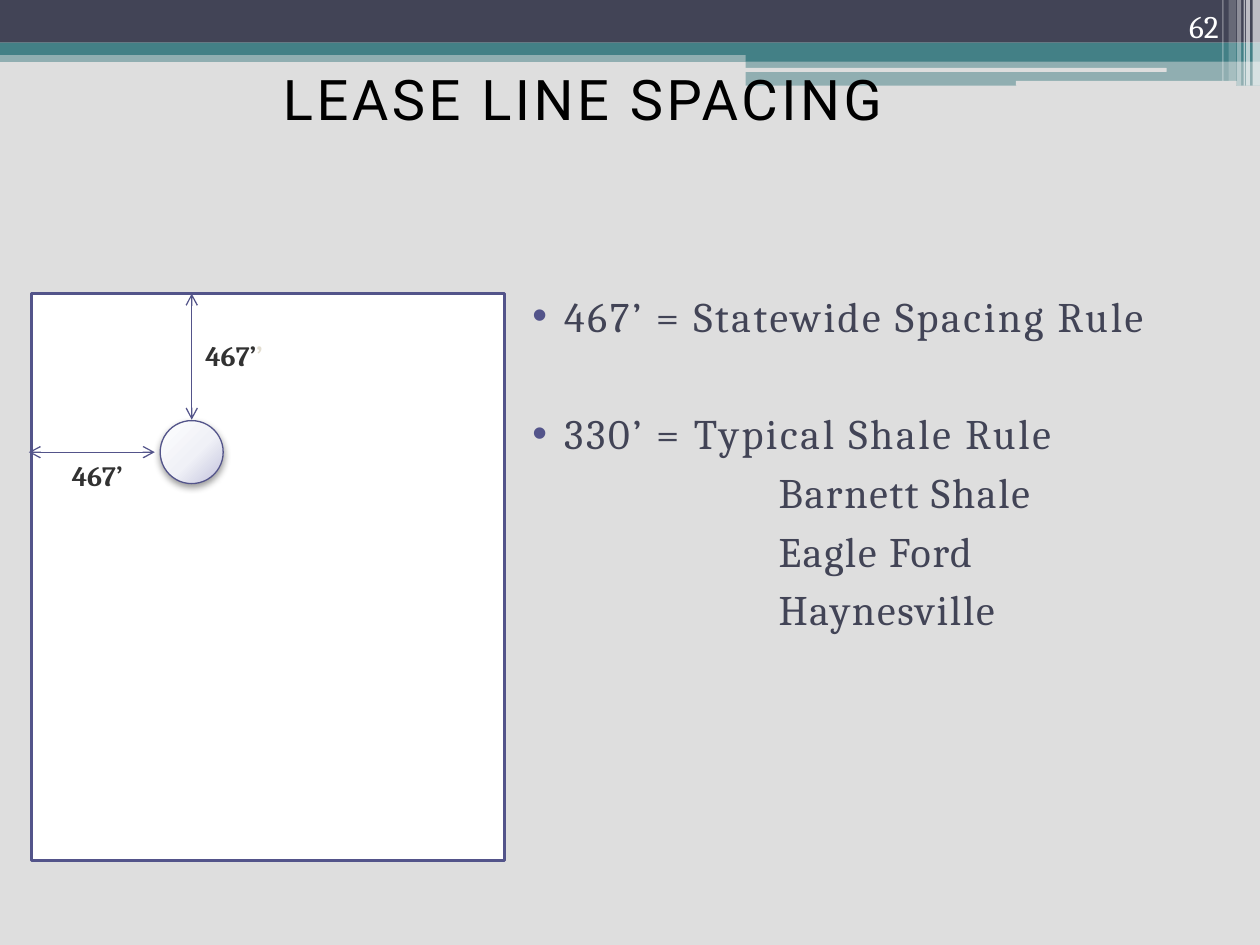
from dataclasses import dataclass
from lxml.etree import SubElement
from pptx import Presentation
from pptx.dml.color import RGBColor
from pptx.enum.shapes import MSO_CONNECTOR, MSO_SHAPE
from pptx.enum.text import MSO_ANCHOR, MSO_AUTO_SIZE, PP_ALIGN
from pptx.oxml import parse_xml
from pptx.oxml.ns import nsdecls, qn
from pptx.util import Cm, Pt


@dataclass(frozen=True)
class Theme:
    paper: str = "DEDEDE"
    navy: str = "424456"
    teal: str = "438086"
    violet: str = "53548A"
    white: str = "FFFFFF"
    black: str = "000000"
    label: str = "323232"
    faint: str = "E3DED1"
    heading_font: str = "Roboto"
    text_font: str = "Cambria"
    title_size: int = 32
    body_size: int = 24
    number_size: int = 18
    label_size: int = 16


def add_span(para, text, *, size, color, font, bold=False, tracking=0):
    span = para.add_run()
    span.text = text
    span.font.size = Pt(size)
    span.font.name = font
    span.font.bold = bold
    span.font.color.rgb = RGBColor.from_string(color)
    if tracking:
        span._r.get_or_add_rPr().set("spc", str(int(tracking * 100)))


class SlideBuilder:
    def __init__(self, page, theme):
        self.page = page
        self.theme = theme
        page.background.fill.solid()
        page.background.fill.fore_color.rgb = RGBColor.from_string(theme.paper)

    def shape(self, kind, left, top, width, height, fill, opacity=100, line=None, weight=1.0):
        shape = self.page.shapes.add_shape(kind, Cm(left), Cm(top), Cm(width), Cm(height))
        shape.shadow.inherit = False
        shape.fill.solid()
        shape.fill.fore_color.rgb = RGBColor.from_string(fill)
        if opacity < 100:
            color = shape._element.spPr.find(".//" + qn("a:srgbClr"))
            SubElement(color, qn("a:alpha"), val=str(opacity * 1000))
        if line:
            shape.line.color.rgb = RGBColor.from_string(line)
            shape.line.width = Pt(weight)
        else:
            shape.line.fill.background()
        return shape

    def well(self, left, top, size):
        theme = self.theme
        shape = self.shape(MSO_SHAPE.FLOWCHART_CONNECTOR, left, top, size, size,
                           theme.white, line=theme.violet, weight=0.75)
        properties = shape._element.spPr
        stops = "".join(
            f'<a:gs pos="{place * 1000}"><a:srgbClr val="{color}"/></a:gs>'
            for place, color in ((0, "FEFEFE"), (55, "F0F1F7"), (100, "C2C2DD")))
        gradient = parse_xml(
            f'<a:gradFill {nsdecls("a")} rotWithShape="1"><a:gsLst>{stops}</a:gsLst>'
            '<a:path path="circle"><a:fillToRect l="-40000" t="-90000" r="140000" b="190000"/>'
            '</a:path></a:gradFill>')
        properties.replace(properties.find(qn("a:solidFill")), gradient)
        shadow = SubElement(properties.find(qn("a:effectLst")), qn("a:outerShdw"),
                            blurRad=str(Pt(4.1)), dist=str(Pt(2)), dir="5400000",
                            algn="ctr", rotWithShape="0")
        color = SubElement(shadow, qn("a:srgbClr"), val=theme.black)
        SubElement(color, qn("a:alpha"), val="40000")

    def dimension(self, left, top, right, bottom):
        connector = self.page.shapes.add_connector(
            MSO_CONNECTOR.STRAIGHT, Cm(left), Cm(top), Cm(right), Cm(bottom))
        connector.line.color.rgb = RGBColor.from_string(self.theme.violet)
        connector.line.width = Pt(0.75)
        outline = connector.line._get_or_add_ln()
        for end in ("a:headEnd", "a:tailEnd"):
            SubElement(outline, qn(end), type="arrow")
        SubElement(connector._element.spPr, qn("a:effectLst"))

    def text(self, left, top, width, height, spans, size, align, anchor=MSO_ANCHOR.TOP, bold=False):
        box = self.page.shapes.add_textbox(Cm(left), Cm(top), Cm(width), Cm(height))
        frame = box.text_frame
        frame.word_wrap = True
        frame.vertical_anchor = anchor
        para = frame.paragraphs[0]
        para.alignment = align
        for text, color in spans:
            add_span(para, text, size=size, color=color, font=self.theme.text_font, bold=bold)

    def placeholder(self, shape, left, top, width, height):
        shape.left, shape.top, shape.width, shape.height = Cm(left), Cm(top), Cm(width), Cm(height)
        self.page.shapes._spTree.append(shape._element)
        frame = shape.text_frame
        frame.word_wrap = True
        frame.auto_size = MSO_AUTO_SIZE.NONE
        return frame

    def title(self, text, left, top, width, height):
        frame = self.placeholder(self.page.shapes.title, left, top, width, height)
        frame.vertical_anchor = MSO_ANCHOR.MIDDLE
        frame.margin_top = 0
        frame.margin_bottom = Cm(1.27)
        para = frame.paragraphs[0]
        para.alignment = PP_ALIGN.CENTER
        add_span(para, text, size=self.theme.title_size, color=self.theme.black,
                 font=self.theme.heading_font, tracking=2)

    def rules(self, items, left, top, width, height):
        theme = self.theme
        frame = self.placeholder(self.page.placeholders[1], left, top, width, height)
        frame.vertical_anchor = MSO_ANCHOR.TOP
        for index, (text, level, gap) in enumerate(items):
            para = frame.paragraphs[0] if index == 0 else frame.add_paragraph()
            para.level = level
            para.alignment = PP_ALIGN.LEFT
            para.space_before = Pt(gap)
            properties = para._p.get_or_add_pPr()
            properties.set("marL", str(Cm(5.08 if level else 0.76)))
            properties.set("indent", str(Cm(0 if level else -0.64)))
            if level:
                SubElement(properties, qn("a:buNone"))
            else:
                color = SubElement(properties, qn("a:buClr"))
                SubElement(color, qn("a:srgbClr"), val=theme.violet)
                SubElement(properties, qn("a:buChar"), char="•")
            add_span(para, text, size=theme.body_size, color=theme.navy,
                     font=theme.text_font, tracking=1 if level else 1.5)


def draw_header(builder):
    theme = builder.theme
    for left, top, width, height, color, opacity in (
        (0, 1.02, 25.4, 0.23, theme.teal, 50),
        (0, 0, 25.4, 0.86, theme.navy, 100),
        (0, 0.86, 25.4, 0.25, theme.teal, 100),
        (15.03, 0.99, 10.37, 0.25, theme.teal, 100),
        (15.03, 1.23, 10.37, 0.5, theme.teal, 50),
    ):
        builder.shape(MSO_SHAPE.RECTANGLE, left, top, width, height, color, opacity)
    for left, top, width, height in ((15.01, 1.37, 8.51, 0.08), (20.48, 1.63, 4.45, 0.1)):
        builder.shape(MSO_SHAPE.ROUNDED_RECTANGLE, left, top, width, height, theme.paper)
    for left, width, height, opacity in (
        (25.25, 0.15, 1.73, 65), (25.12, 0.08, 1.73, 65), (25.07, 0.03, 1.73, 60),
        (24.94, 0.08, 1.73, 40), (24.77, 0.15, 1.63, 20), (24.64, 0.03, 1.63, 30),
    ):
        builder.shape(MSO_SHAPE.RECTANGLE, left, 0, width, height, theme.white, opacity)


def draw_lease(builder):
    theme = builder.theme
    top, well_left, well_top, well_size, reach = 5.92, 3.23, 8.48, 1.27, 2.54
    center_x, center_y = well_left + well_size / 2, well_top + well_size / 2
    builder.shape(MSO_SHAPE.RECTANGLE, 0.64, top, 9.53, 11.43, theme.white,
                  line=theme.violet, weight=1.5)
    builder.well(well_left, well_top, well_size)
    builder.dimension(0.58, center_y, 0.58 + reach, center_y)
    builder.dimension(center_x, top, center_x, top + reach)
    distance = ("467’", theme.label)
    builder.text(3.89, 6.71, 2.54, 0.94, [distance, ("’", theme.faint)],
                 theme.label_size, PP_ALIGN.LEFT, bold=True)
    builder.text(0.69, center_y, 2.54, 0.94, [distance],
                 theme.label_size, PP_ALIGN.CENTER, bold=True)


def main():
    deck = Presentation()
    deck.slide_width, deck.slide_height = Cm(25.4), Cm(19.05)
    theme = Theme()
    builder = SlideBuilder(deck.slides.add_slide(deck.slide_layouts[1]), theme)
    draw_header(builder)
    builder.title("LEASE LINE SPACING", 0.74, 1.7, 22.02, 1.83)
    builder.rules([
        ("467’ = Statewide Spacing Rule", 0, 4.8),
        ("330’ = Typical Shale Rule", 0, 38.3),
        ("Barnett Shale", 1, 4.8),
        ("Eagle Ford", 1, 4.8),
        ("Haynesville", 1, 4.8),
    ], 10.36, 5.72, 14.4, 9.09)
    draw_lease(builder)
    builder.text(22.71, 0, 2.11, 1.02, [("62", theme.white)],
                 theme.number_size, PP_ALIGN.RIGHT, MSO_ANCHOR.BOTTOM)
    deck.save("out.pptx")


if __name__ == "__main__":
    main()
